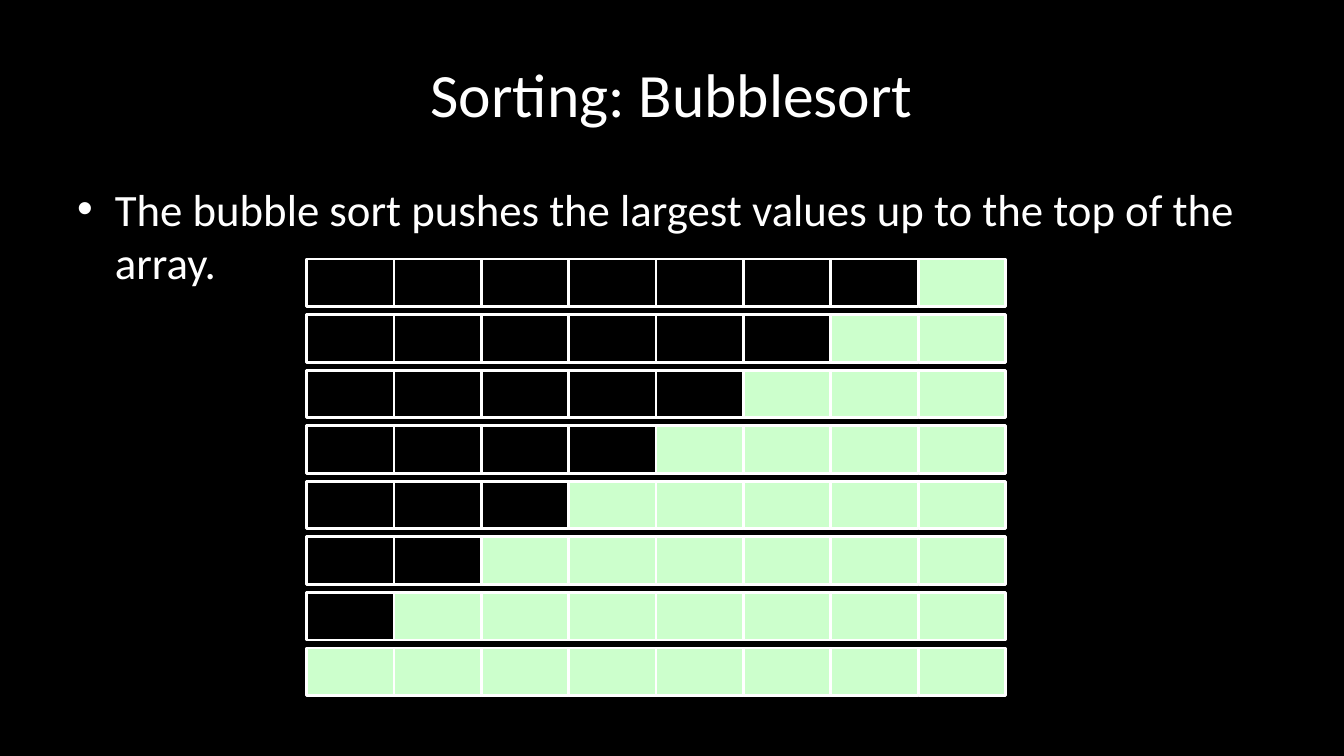
from dataclasses import dataclass

from lxml.etree import SubElement
from pptx import Presentation
from pptx.dml.color import RGBColor
from pptx.enum.shapes import MSO_SHAPE
from pptx.enum.text import MSO_ANCHOR as Anchor, PP_ALIGN as Align
from pptx.oxml.ns import qn
from pptx.slide import Slide
from pptx.util import Pt

BLACK = RGBColor(0x00, 0x00, 0x00)
WHITE = RGBColor(0xFF, 0xFF, 0xFF)
SORTED_GREEN = RGBColor(0xCC, 0xFF, 0xCC)

ARRAY_LENGTH = 8
ARRAY_LEFT, ARRAY_TOP = 219, 185
CELL_WIDTH, CELL_HEIGHT = 62.4, 34
PASS_STEP = 39.7
BULLET_INDENT = 27


@dataclass
class Cell:
    left: float
    top: float
    is_sorted: bool


def add_text(slide: Slide, text: str, *, left: float, top: float, width: float,
             height: float, size: float, align: Align = Align.LEFT,
             anchor: Anchor = Anchor.TOP, space_before: float = 0,
             bullet: str = "") -> None:
    frame = slide.shapes.add_textbox(Pt(left), Pt(top), Pt(width), Pt(height)).text_frame
    frame.word_wrap = True
    frame.vertical_anchor = anchor
    paragraph = frame.paragraphs[0]
    paragraph.alignment = align
    paragraph.space_before = Pt(space_before)
    run = paragraph.add_run()
    run.text = text
    run.font.name = "Calibri"
    run.font.size = Pt(size)
    run.font.color.rgb = WHITE
    if bullet:
        properties = paragraph._p.get_or_add_pPr()
        properties.set("marL", str(Pt(BULLET_INDENT)))
        properties.set("indent", str(-Pt(BULLET_INDENT)))
        SubElement(properties, qn("a:buFont"), typeface="Arial")
        SubElement(properties, qn("a:buChar"), char=bullet)


def add_cell(slide: Slide, cell: Cell) -> None:
    box = slide.shapes.add_shape(MSO_SHAPE.RECTANGLE, Pt(cell.left), Pt(cell.top),
                                 Pt(CELL_WIDTH), Pt(CELL_HEIGHT))
    box.shadow.inherit = False
    box.line.color.rgb = WHITE
    box.line.width = Pt(2)
    if cell.is_sorted:
        box.fill.solid()
        box.fill.fore_color.rgb = SORTED_GREEN
    else:
        box.fill.background()


def sorting_passes() -> list[Cell]:
    """Each pass adds one sorted cell at the right end of the array."""
    return [
        Cell(ARRAY_LEFT + index * CELL_WIDTH, ARRAY_TOP + pass_index * PASS_STEP,
             is_sorted=index + pass_index >= ARRAY_LENGTH - 1)
        for pass_index in range(ARRAY_LENGTH)
        for index in range(ARRAY_LENGTH)
    ]


def main() -> None:
    presentation = Presentation()
    presentation.slide_width, presentation.slide_height = Pt(960), Pt(540)
    slide = presentation.slides.add_slide(presentation.slide_layouts[6])
    slide.background.fill.solid()
    slide.background.fill.fore_color.rgb = BLACK

    add_text(slide, "Sorting: Bubblesort", left=48, top=21.6, width=864, height=90,
             size=44, align=Align.CENTER, anchor=Anchor.MIDDLE)
    add_text(slide, "The bubble sort pushes the largest values up to the top of the array.",
             left=48, top=126, width=864, height=356.4, size=32,
             space_before=6.4, bullet="•")
    for cell in sorting_passes():
        add_cell(slide, cell)

    presentation.save("out.pptx")


if __name__ == "__main__":
    main()
